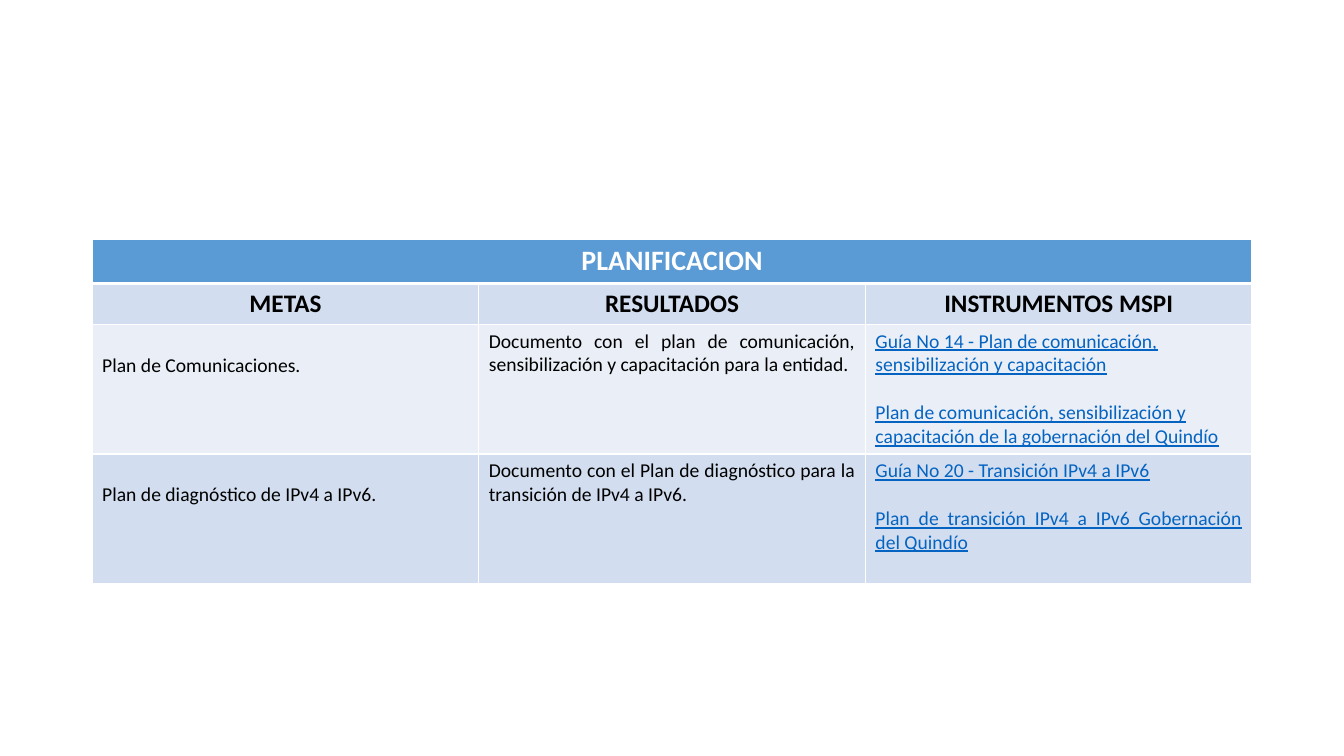
from lxml import etree
from pptx import Presentation
from pptx.dml.color import RGBColor
from pptx.enum.text import PP_ALIGN
from pptx.oxml.ns import qn
from pptx.util import Pt

LEFT, CENTER, JUSTIFY = PP_ALIGN.LEFT, PP_ALIGN.CENTER, PP_ALIGN.JUSTIFY
FONT = "Calibri"
BLACK, WHITE, LINK = "000000", "FFFFFF", "0563C1"
HEADER, DARK_BAND, LIGHT_BAND = "5B9BD5", "D2DEEF", "EAEFF7"
LINE_HEIGHT = 17.1
CELL_MARGIN = 3.6

TITLE = "PLANIFICACION"
HEADINGS = ["METAS", "RESULTADOS", "INSTRUMENTOS MSPI"]
GOALS = [
    ("Plan de Comunicaciones.",
     "Documento con el plan de comunicación, sensibilización y capacitación para la entidad.",
     ["Guía No 14 - Plan de comunicación, sensibilización y capacitación",
      "Plan de comunicación, sensibilización y capacitación de la gobernación del Quindío"],
     LEFT, LIGHT_BAND),
    ("Plan de diagnóstico de IPv4 a IPv6.",
     "Documento con el Plan de diagnóstico para la transición de IPv4 a IPv6.",
     ["Guía No 20 - Transición IPv4 a IPv6",
      "Plan de transición IPv4 a IPv6 Gobernación del Quindío"],
     JUSTIFY, DARK_BAND),
]


def color(value):
    return RGBColor.from_string(value)


def style_cell(cell, fill, top=1, bottom=1):
    properties = cell._tc.get_or_add_tcPr()
    for side, width in (("L", 1), ("R", 1), ("T", top), ("B", bottom)):
        line = etree.SubElement(properties, qn(f"a:ln{side}"), w=str(Pt(width)))
        paint = etree.SubElement(line, qn("a:solidFill"))
        etree.SubElement(paint, qn("a:srgbClr"), val=WHITE)
    cell.fill.solid()
    cell.fill.fore_color.rgb = color(fill)


def write_cell(cell, lines, size=14, ink=BLACK, align=LEFT, bold=False, underline=False):
    for index, line in enumerate(lines):
        para = cell.text_frame.paragraphs[0] if index == 0 else cell.text_frame.add_paragraph()
        para.alignment = align
        if index:
            para.space_before = Pt(LINE_HEIGHT)
        span = para.add_run()
        span.text = line
        span.font.name = FONT
        span.font.size = Pt(size)
        span.font.bold = bold
        span.font.underline = underline
        span.font.color.rgb = color(ink)


def add_planning_table(page, left, top, width, row_heights):
    frame = page.shapes.add_table(len(row_heights), len(HEADINGS), Pt(left), Pt(top),
                                  Pt(width), Pt(sum(row_heights)))
    table = frame.table
    for column in table.columns:
        column.width = Pt(width / len(HEADINGS))
    for row, height in zip(table.rows, row_heights):
        row.height = Pt(height)

    for column in range(len(HEADINGS)):
        style_cell(table.cell(0, column), HEADER, bottom=3)
    table.cell(0, 0).merge(table.cell(0, len(HEADINGS) - 1))
    write_cell(table.cell(0, 0), [TITLE], 20, WHITE, CENTER, bold=True)

    for column, heading in enumerate(HEADINGS):
        cell = table.cell(1, column)
        style_cell(cell, DARK_BAND, top=3)
        write_cell(cell, [heading], 18, align=CENTER, bold=True)

    for row, (goal, result, guides, guide_align, band) in enumerate(GOALS, start=2):
        goal_cell, result_cell, guide_cell = (table.cell(row, column) for column in range(3))
        for cell in (goal_cell, result_cell, guide_cell):
            style_cell(cell, band)
        goal_cell.margin_top = Pt(CELL_MARGIN + LINE_HEIGHT)
        write_cell(goal_cell, [goal])
        write_cell(result_cell, [result], align=JUSTIFY)
        write_cell(guide_cell, guides, ink=LINK, align=guide_align, underline=True)


def main():
    deck = Presentation()
    deck.slide_width, deck.slide_height = Pt(960), Pt(540)
    page = deck.slides.add_slide(deck.slide_layouts[6])
    add_planning_table(page, 65.8, 170.8, 828.6, [31, 29, 92.6, 92.6])
    deck.save("out.pptx")


if __name__ == "__main__":
    main()
